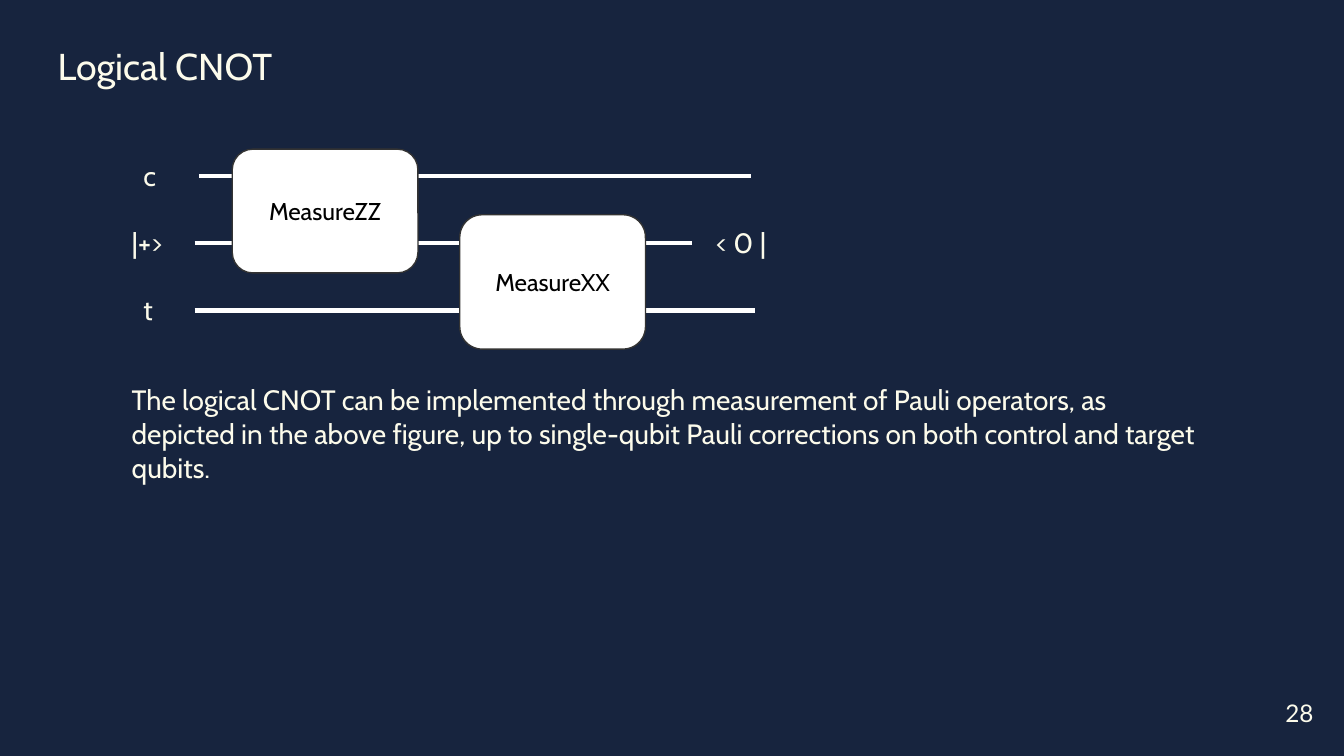
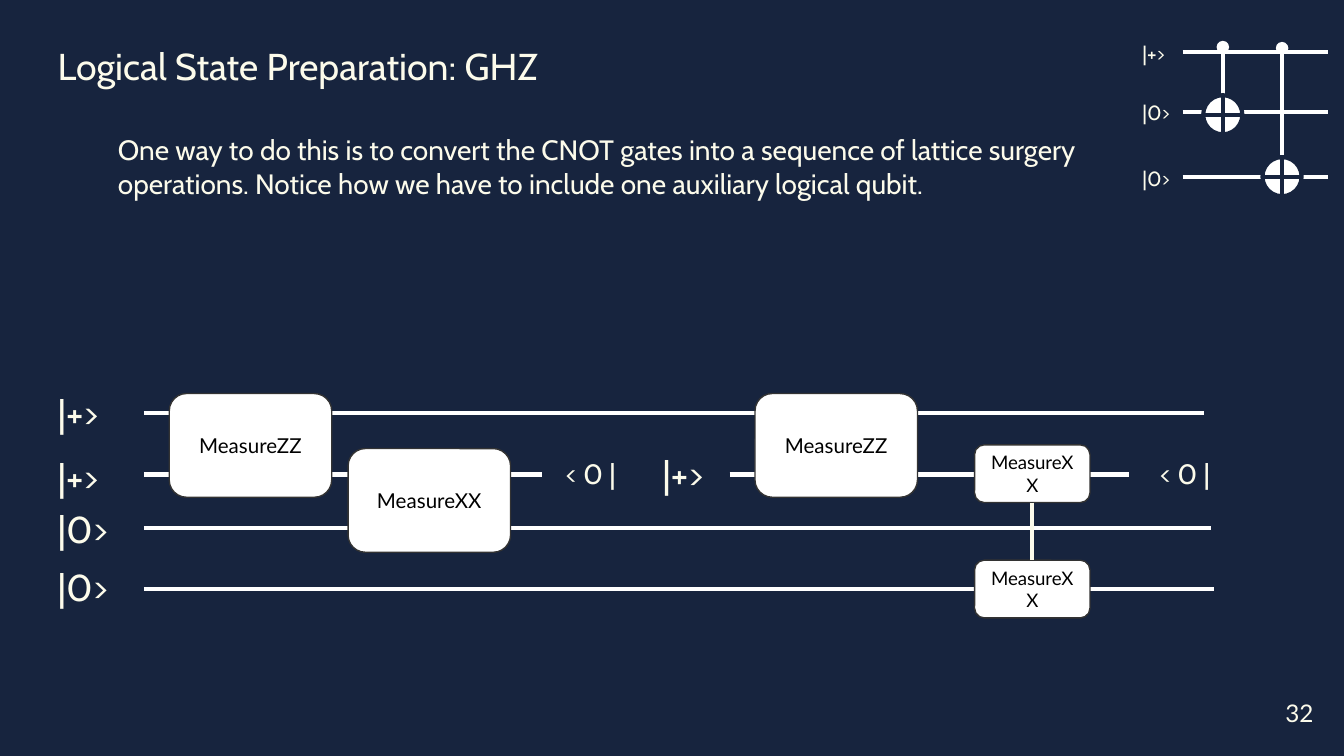
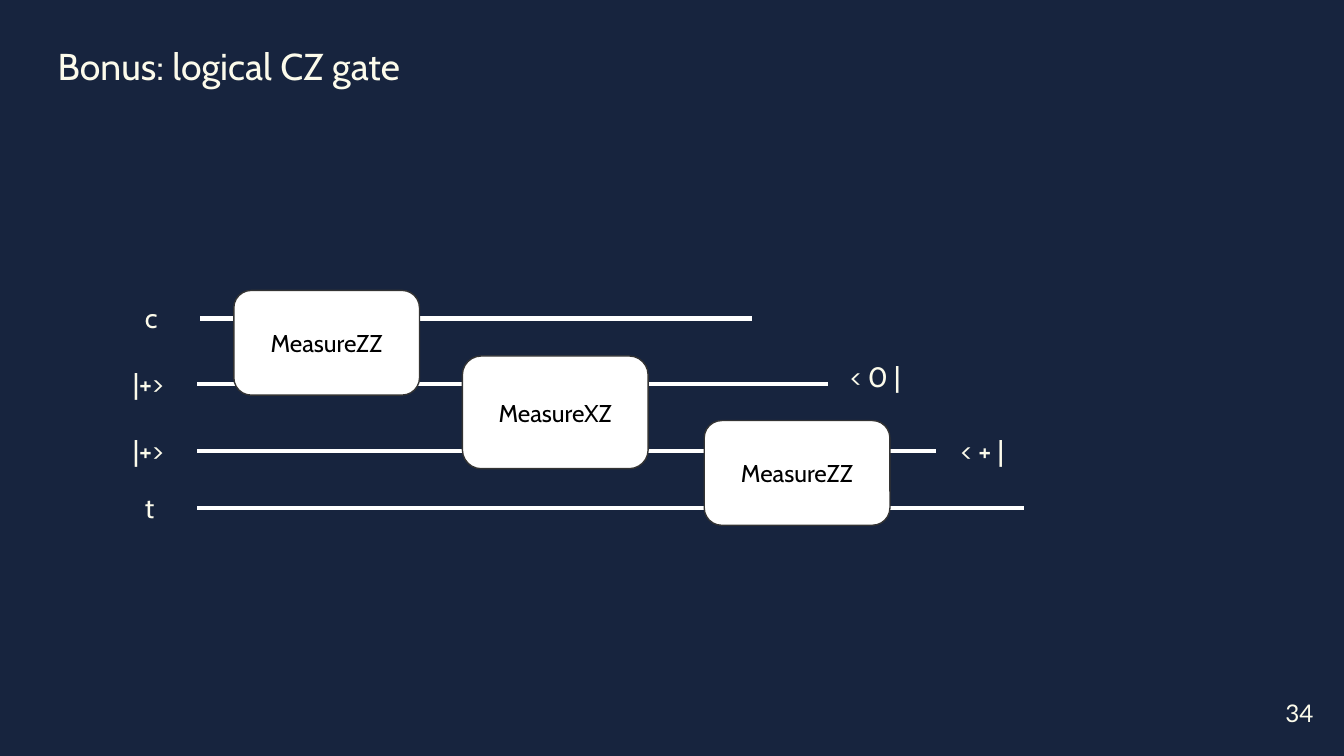
from lxml.etree import SubElement
from pptx import Presentation
from pptx.dml.color import RGBColor
from pptx.enum.shapes import MSO_CONNECTOR as Link, MSO_SHAPE as Preset
from pptx.enum.text import MSO_ANCHOR as Anchor, PP_ALIGN as Align
from pptx.oxml.ns import qn
from pptx.util import Cm, Pt

NAVY, CREAM, WHITE, BLACK, CHARCOAL = "17243E", "FCFBEB", "FFFFFF", "000000", "333333"
LABEL_SIZES = {11: (1.37, 0.91), 15: (1.85, 1.17), 20: (2.18, 1.45)}


def paint(target, colour):
    target.rgb = RGBColor.from_string(colour)


class Deck:
    heading_font = "Cabin"
    number_font = "Lato"
    inset = Cm(0.25)
    wire_width = Pt(2.25)
    target_size = 0.74

    def __init__(self):
        self.prs = Presentation()
        self.prs.slide_width, self.prs.slide_height = Cm(25.4), Cm(14.29)
        self.slide = None

    def start(self, title, number):
        self.slide = self.prs.slides.add_slide(self.prs.slide_layouts[6])
        backdrop = self.slide.background.fill
        backdrop.solid()
        paint(backdrop.fore_color, NAVY)
        self.text(title, 0.84, 0.56, 13.87, 1.17, 20)
        self.text(number, 23.55, 12.95, 1.52, 1.09, 13, self.number_font, Align.RIGHT)

    def fill_text(self, shape, words, size, font, colour, align, anchor):
        frame = shape.text_frame
        frame.word_wrap = True
        frame.vertical_anchor = anchor
        frame.margin_left = frame.margin_right = self.inset
        frame.margin_top = frame.margin_bottom = self.inset
        paragraph = frame.paragraphs[0]
        paragraph.alignment = align
        run = paragraph.add_run()
        run.text = words
        run.font.size, run.font.name = Pt(size), font
        paint(run.font.color, colour)

    def text(self, words, left, top, width, height, size=15, font=heading_font, align=Align.LEFT):
        box = self.slide.shapes.add_textbox(Cm(left), Cm(top), Cm(width), Cm(height))
        self.fill_text(box, words, size, font, CREAM, align, Anchor.TOP)

    def label(self, words, left, middle, size=15):
        width, height = LABEL_SIZES[size]
        self.text(words, left, middle - height / 2, width, height, size)

    def block(self, preset, left, top, width, height, outline, weight):
        shape = self.slide.shapes.add_shape(preset, Cm(left), Cm(top), Cm(width), Cm(height))
        shape.shadow.inherit = False
        shape.fill.solid()
        paint(shape.fill.fore_color, WHITE)
        paint(shape.line.color, outline)
        shape.line.width = weight
        return shape

    def gate(self, words, left, top, width, height, size=13, font=heading_font):
        gate = self.block(Preset.ROUNDED_RECTANGLE, left, top, width, height, CHARCOAL, Pt(0.75))
        self.fill_text(gate, words, size, font, BLACK, Align.CENTER, Anchor.MIDDLE)
        return gate

    def target(self, centre, middle):
        size = self.target_size
        self.block(Preset.FLOWCHART_OR, centre - size / 2, middle - size / 2, size, size,
                   NAVY, self.wire_width)

    def line(self, x1, y1, x2, y2, colour=WHITE, dotted_start=False):
        line = self.slide.shapes.add_connector(Link.STRAIGHT, Cm(x1), Cm(y1), Cm(x2), Cm(y2))
        paint(line.line.color, colour)
        line.line.width = self.wire_width
        properties = line._element.spPr
        if dotted_start:
            SubElement(properties.find(qn("a:ln")), qn("a:headEnd"), type="oval")
        SubElement(properties, qn("a:effectLst"))
        return line

    def wire(self, start, end, y):
        self.line(start, y, end, y)

    def join(self, upper, lower):
        link = self.line(0, 0, 0, 0, CREAM)
        link.begin_connect(upper, 2)
        link.end_connect(lower, 0)


def logical_cnot(deck):
    deck.start("Logical CNOT", "28")
    control, helper, target = (3.33 + 1.27 * row for row in range(3))
    deck.wire(3.76, 14.2, control)
    deck.wire(3.68, 13.08, helper)
    deck.wire(3.68, 14.27, target)
    for words, left, y in (("c", 2.46, control), ("|+>", 2.24, helper),
                           ("t", 2.46, target), ("< 0 |", 13.28, helper)):
        deck.label(words, left, y)
    deck.gate("MeasureZZ", 4.39, 2.82, 3.51, 2.34)
    deck.gate("MeasureXX", 8.69, 4.06, 3.51, 2.54)
    deck.text("The logical CNOT can be implemented through measurement of Pauli operators, as "
              "depicted in the above figure, up to single-qubit Pauli corrections on both "
              "control and target qubits.", 2.24, 6.99, 20.78, 2.54)


def ghz_preparation(deck):
    deck.start("Logical State Preparation: GHZ", "32")
    for state, y in (("|+>", 0.99), ("|0>", 2.11), ("|0>", 3.35)):
        deck.wire(22.35, 25.1, y)
        deck.label(state, 21.34, y, 11)
    for x, top, bottom, middle in ((23.11, 0.89, 2.36, 2.17), (24.23, 0.91, 2.97, 3.34)):
        deck.line(x, top, x, bottom, dotted_start=True)
        deck.target(x, middle)
    deck.text("One way to do this is to convert the CNOT gates into a sequence of lattice surgery "
              "operations. Notice how we have to include one auxiliary logical qubit.",
              1.98, 2.26, 19.35, 2.54)

    helper = 8.97
    for state, end, y, middle in (("|+>", 22.76, 7.8, 7.86), ("|+>", 10.24, helper, 9.06),
                                  ("|0>", 22.89, 9.98, 10.05), ("|0>", 22.94, 11.13, 11.14)):
        deck.wire(2.72, end, y)
        deck.label(state, 0.84, middle, 20)
    deck.wire(13.79, 21.34, helper)
    deck.label("|+>", 12.27, 9, 20)
    for left in (10.44, 21.67):
        deck.label("< 0 |", left, helper)

    for words, left, top in (("MeasureZZ", 3.2, 7.44), ("MeasureXX", 6.58, 8.48),
                             ("MeasureZZ", 14.27, 7.44)):
        deck.gate(words, left, top, 3.07, 1.96, 11, "Lato")
    upper, lower = (deck.gate("MeasureXX", 18.42, top, 2.18, 1.09, 10, "Lato")
                    for top in (8.41, 10.59))
    deck.join(upper, lower)


def logical_cz(deck):
    deck.start("Bonus: logical CZ gate", "34")
    for words, left, start, end, y in (("c", 2.49, 3.78, 14.22, 6.02),
                                       ("|+>", 2.26, 3.73, 15.65, 7.26),
                                       ("|+>", 2.26, 3.73, 17.68, 8.53),
                                       ("t", 2.49, 3.73, 19.35, 9.6)):
        deck.wire(start, end, y)
        deck.label(words, left, y)
    deck.label("< 0 |", 15.82, 7.14)
    deck.label("< + |", 17.91, 8.53)
    for words, left, top, height in (("MeasureZZ", 4.42, 5.49, 1.98),
                                     ("MeasureXZ", 8.74, 6.73, 2.13),
                                     ("MeasureZZ", 13.31, 7.95, 1.98)):
        deck.gate(words, left, top, 3.51, height)


def main():
    deck = Deck()
    for build in (logical_cnot, ghz_preparation, logical_cz):
        build(deck)
    deck.prs.save("out.pptx")


if __name__ == "__main__":
    main()
